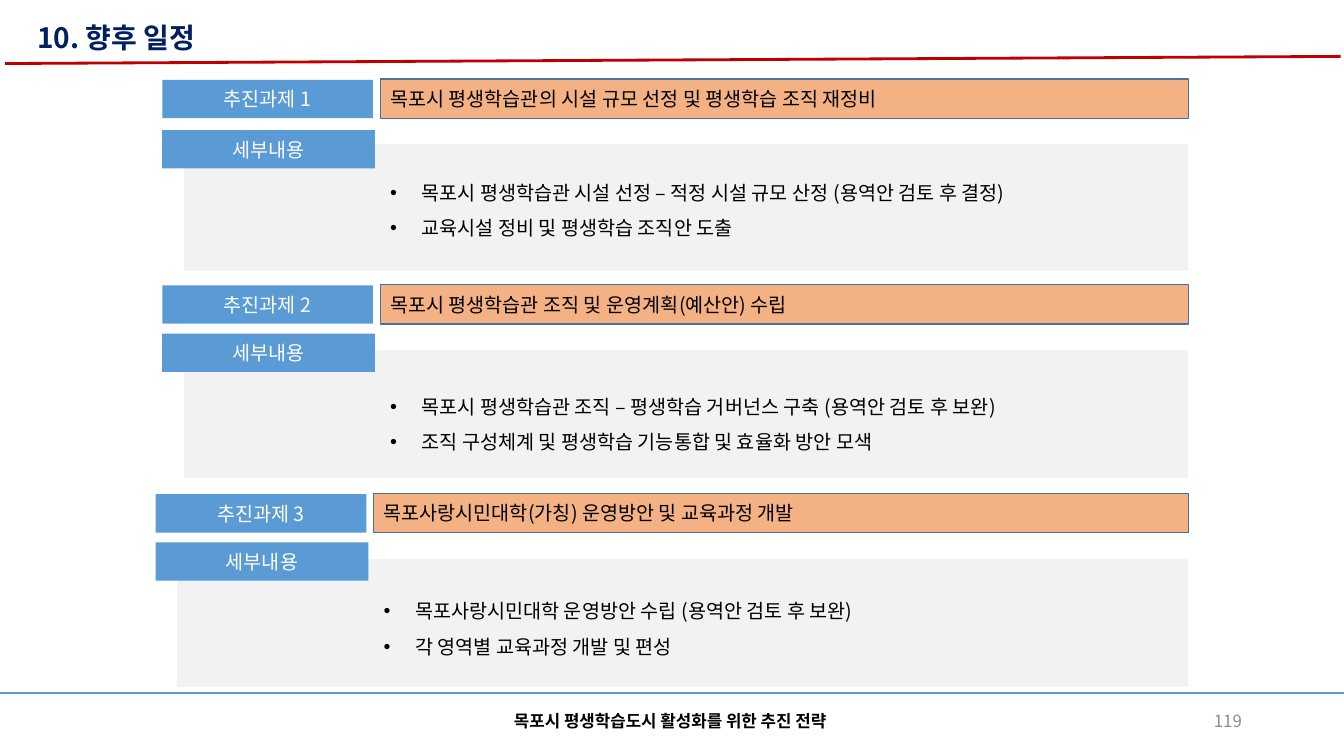
import pptx
import pptx.util
import pptx.dml.color
import pptx.enum.shapes
import pptx.enum.text
import pptx.oxml.ns
from dataclasses import dataclass
from lxml import etree

Pt = pptx.util.Pt
RGB = pptx.dml.color.RGBColor.from_string
ALIGN = pptx.enum.text.PP_ALIGN
ANCHOR = pptx.enum.text.MSO_ANCHOR
qn = pptx.oxml.ns.qn


@dataclass(frozen=True)
class Theme:
    font: str = "Noto Sans CJK KR"
    navy: str = "002060"
    red: str = "C00000"
    blue: str = "5B9BD5"
    dark_blue: str = "43739E"
    orange: str = "F4B183"
    panel: str = "F2F2F2"
    white: str = "FFFFFF"
    black: str = "000000"
    gray: str = "8C8C8C"
    title_size: int = 20
    body_size: int = 14
    footer_size: int = 12


theme = Theme()


def write(shape, lines, size, color, align=ALIGN.LEFT, bold=False, anchor=ANCHOR.MIDDLE, bullets=False):
    """Fill a shape with one paragraph per line, optionally bulleted."""
    frame = shape.text_frame
    frame.word_wrap = True
    frame.auto_size = pptx.enum.text.MSO_AUTO_SIZE.NONE
    frame.vertical_anchor = anchor
    for index, line in enumerate(lines):
        paragraph = frame.add_paragraph() if index else frame.paragraphs[0]
        paragraph.alignment = align
        if bullets:
            properties = paragraph._p.get_or_add_pPr()
            properties.set("marL", str(Pt(22.5)))
            properties.set("indent", str(-Pt(22.5)))
            etree.SubElement(properties, qn("a:buFont")).set("typeface", "Arial")
            etree.SubElement(properties, qn("a:buChar")).set("char", "•")
            paragraph.line_spacing = 1.5
        run = paragraph.add_run()
        run.text = line
        run.font.size = Pt(size)
        run.font.bold = bold
        run.font.color.rgb = RGB(color)
        run.font.name = theme.font
        etree.SubElement(run.font._element, qn("a:ea")).set("typeface", theme.font)


def add_rect(left, top, width, height, fill, line=None):
    rect = slide.shapes.add_shape(
        pptx.enum.shapes.MSO_SHAPE.RECTANGLE, Pt(left), Pt(top), Pt(width), Pt(height))
    rect.shadow.inherit = False
    rect.fill.solid()
    rect.fill.fore_color.rgb = RGB(fill)
    if line:
        rect.line.color.rgb = RGB(line)
        rect.line.width = Pt(1)
    else:
        rect.line.fill.background()
    return rect


presentation = pptx.Presentation()
presentation.slide_width = Pt(960)
presentation.slide_height = Pt(540)
slide = presentation.slides.add_slide(presentation.slide_layouts[5])

# Title
title = slide.shapes.title
title.left, title.top, title.width, title.height = Pt(19.5), Pt(10.8), Pt(422.6), Pt(31.7)
write(title, ["10. 향후 일정"], theme.title_size, theme.navy, bold=True, anchor=ANCHOR.TOP)

# Header and footer rules
for start_x, start_y, end_x, end_y, color, weight in [
    (3.6, 45.4, 957.6, 40.3, theme.red, 2),
    (0, 495, 960, 495, theme.blue, 1.5),
]:
    rule = slide.shapes.add_connector(
        pptx.enum.shapes.MSO_CONNECTOR.STRAIGHT, Pt(start_x), Pt(start_y), Pt(end_x), Pt(end_y))
    rule.line.color.rgb = RGB(color)
    rule.line.width = Pt(weight)
    etree.SubElement(rule._element.spPr, qn("a:effectLst"))

# Footer
for left, width, text, color, align, bold in [
    (318.2, 324, "목포시 평생학습도시 활성화를 위한 추진 전략 ", theme.black, ALIGN.CENTER, True),
    (678.2, 216, "119", theme.gray, ALIGN.RIGHT, False),
]:
    footer = slide.shapes.add_textbox(Pt(left), Pt(500.4), Pt(width), Pt(28.8))
    write(footer, [text], theme.footer_size, color, align, bold)

# Tasks: left edge, then tops of the heading, detail label, panel and bullets
right_edge = 849
tasks = [
    (115.9, 56.5, 92.9, 102.2, 109.4,
     "목포시 평생학습관의 시설 규모 선정 및 평생학습 조직 재정비",
     ["목포시 평생학습관 시설 선정 – 적정 시설 규모 산정 (용역안 검토 후 결정)",
      "교육시설 정비 및 평생학습 조직안 도출"]),
    (115.9, 203.3, 238.3, 249.5, 262.1,
     "목포시 평생학습관 조직 및 운영계획(예산안) 수립",
     ["목포시 평생학습관 조직 – 평생학습 거버넌스 구축 (용역안 검토 후 보완)",
      "조직 구성체계 및 평생학습 기능통합 및 효율화 방안 모색"]),
    (111.2, 352.5, 387.4, 398.9, 408.2,
     "목포사랑시민대학(가칭) 운영방안 및 교육과정 개발",
     ["목포사랑시민대학 운영방안 수립 (용역안 검토 후 보완)",
      "각 영역별 교육과정 개발 및 편성"]),
]
for number, (left, heading_top, label_top, panel_top, bullets_top, heading, details) in enumerate(tasks, 1):
    panel_left = left + 14.8
    heading_left = left + 155.7
    add_rect(panel_left, panel_top, right_edge - panel_left, 92.2, theme.panel, theme.white)

    detail_list = slide.shapes.add_textbox(Pt(heading_left), Pt(bullets_top), Pt(558.5), Pt(73.4))
    write(detail_list, details, theme.body_size, theme.black, bullets=True)

    for label, top, width in [(f"추진과제 {number}", heading_top + 0.5, 150.5), ("세부내용", label_top, 152)]:
        write(add_rect(left, top, width, 27.4, theme.blue), [label],
              theme.body_size, theme.white, ALIGN.CENTER)

    heading_bar = add_rect(heading_left, heading_top, right_edge - heading_left, 28.1,
                           theme.orange, theme.dark_blue)
    write(heading_bar, [heading], theme.body_size, theme.black)

presentation.save("out.pptx")
